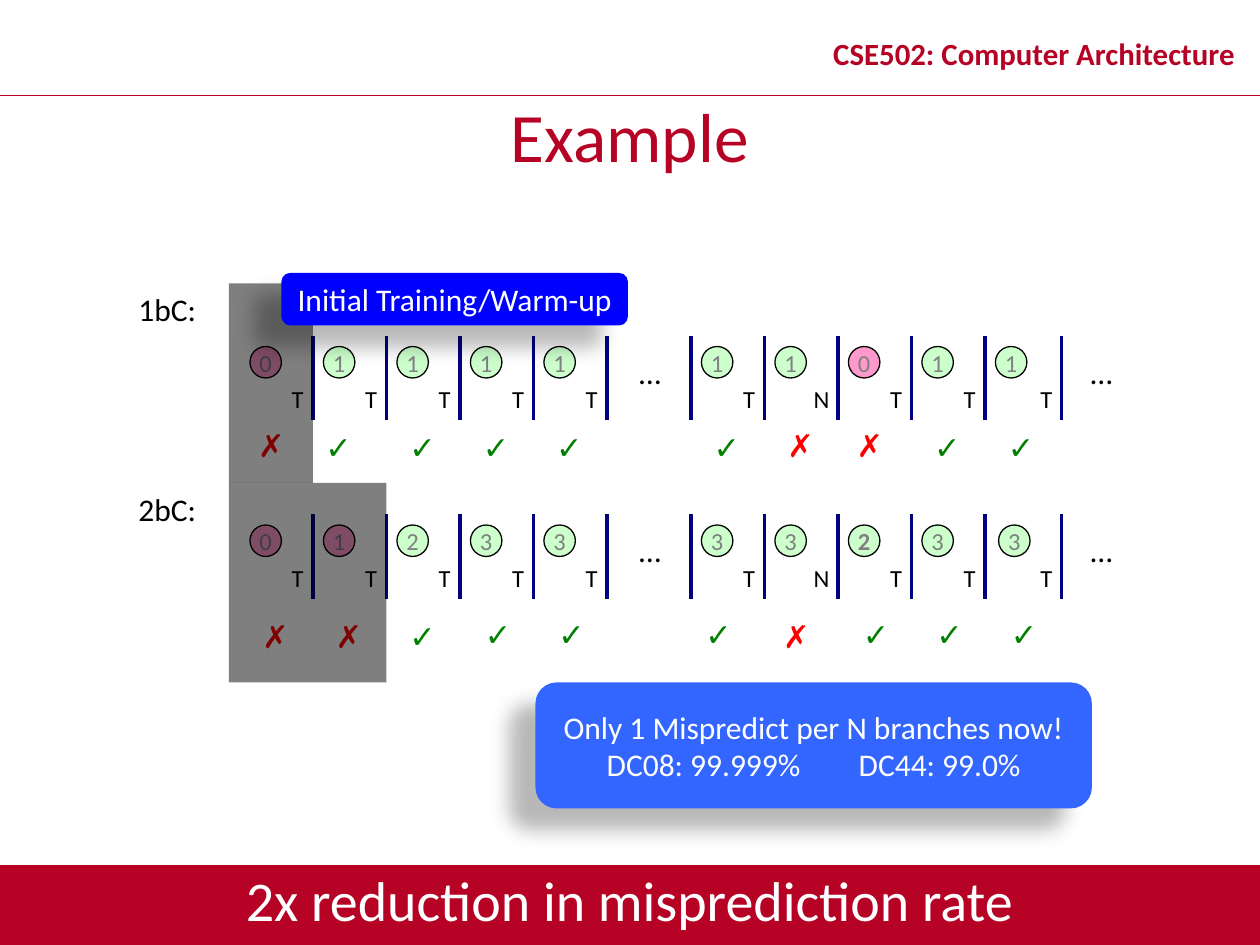
from dataclasses import dataclass, field

from lxml import etree
from pptx import Presentation
from pptx.dml.color import RGBColor
from pptx.enum.shapes import MSO_CONNECTOR, MSO_SHAPE
from pptx.enum.text import MSO_ANCHOR, MSO_AUTO_SIZE, PP_ALIGN
from pptx.oxml.ns import qn
from pptx.util import Inches, Pt

RECTANGLE, ROUNDED, OVAL = MSO_SHAPE.RECTANGLE, MSO_SHAPE.ROUNDED_RECTANGLE, MSO_SHAPE.OVAL
STRAIGHT = MSO_CONNECTOR.STRAIGHT
LEFT, CENTER = PP_ALIGN.LEFT, PP_ALIGN.CENTER
MIDDLE = MSO_ANCHOR.MIDDLE
GROW = MSO_AUTO_SIZE.SHAPE_TO_FIT_TEXT

COLUMNS, ROWS = 120, 90  # twelve grid units to the inch
CELL_PITCH = 7
CELL_LEFTS = [start + CELL_PITCH * i for start in (22.8, 65.8) for i in range(5)]
CELL_LEFTS[-1] += 0.3
SECOND_RUN = 5  # index of the first cell after the dots
OUTCOMES = "TTTTTTNTTT"


@dataclass(frozen=True)
class Theme:
    font: str = "Calibri"
    brand: str = "B60225"
    white: str = "FFFFFF"
    black: str = "000000"
    state_text: str = "808080"
    taken_fill: str = "CCFFCC"
    not_taken_fill: str = "FF99CC"
    separator: str = "000080"
    hit: str = "008000"
    miss: str = "FF0000"
    warm_up: str = "0000FF"
    result: str = "3366FF"
    header_size: float = 17.6
    title_size: float = 39.6
    footer_size: float = 32
    body_size: float = 18
    small_size: float = 14


THEME = Theme()


@dataclass
class Predictor:
    """One row of the trace; shifts move single symbols off the grid."""
    label: str
    label_top: float
    top: float
    states: str
    not_taken: set
    marks: str
    mark_drops: dict
    warm_up_top: float
    warm_up_width: float
    mark_shifts: dict = field(default_factory=dict)
    state_shifts: dict = field(default_factory=dict)
    bold_states: set = field(default_factory=set)


PREDICTORS = [
    Predictor("1bC:", 27, 32, "0111111011", {0, 7}, "✗✓✓✓✓✓✗✗✓✓",
              {"✗": 8, "✓": 8.2}, 27, 8,
              mark_shifts={0: (-0.4, 0), 1: (-1, 0), 7: (-0.4, 0), 9: (-0.3, 0)},
              state_shifts={9: -0.3}),
    Predictor("2bC:", 46.1, 49, "0123333233", {0, 1}, "✗✗✓✓✓✓✗✓✓✓",
              {"✗": 9.2, "✓": 9}, 46, 15,
              mark_shifts={2: (0, 0.2), 3: (0.2, 0), 4: (0.2, 0), 5: (-0.8, 0),
                           6: (-0.4, 0), 7: (0.2, 0), 8: (0.2, 0)},
              bold_states={7}),
]


def units(*values):
    return [Inches(value / 12) for value in values]


def color(value):
    return RGBColor.from_string(value)


def write(shape, text, size, text_color, align=CENTER, bold=False, wrap=False):
    frame = shape.text_frame
    frame.text = text
    frame.word_wrap = wrap
    for paragraph in frame.paragraphs:
        paragraph.alignment = align
        for run in paragraph.runs:
            run.font.name = THEME.font
            run.font.size = Pt(size)
            run.font.bold = bold
            run.font.color.rgb = color(text_color)
    return frame


def add_label(slide, box, text, size, text_color=THEME.black, **style):
    shape = slide.shapes.add_textbox(*units(*box))
    frame = write(shape, text, size, text_color, **style)
    frame.auto_size = GROW
    return frame


def add_filled(slide, kind, box, fill, alpha=None, outline=None):
    shape = slide.shapes.add_shape(kind, *units(*box))
    shape.shadow.inherit = False
    shape.fill.solid()
    shape.fill.fore_color.rgb = color(fill)
    if alpha is not None:
        fill_color = shape.fill._xPr.find(qn("a:solidFill"))[0]
        etree.SubElement(fill_color, qn("a:alpha"), val=str(alpha * 1000))
    if outline:
        shape.line.color.rgb = color(outline)
        shape.line.width = Pt(0.75)
    else:
        shape.line.fill.background()
    return shape


def add_shadow(shape, alpha, blur, distance, angle):
    effects = shape._element.spPr.find(qn("a:effectLst"))
    shadow = etree.SubElement(
        effects, qn("a:outerShdw"), blurRad=str(Pt(blur)), dist=str(Pt(distance)),
        dir=str(angle * 60000), algn="ctr", rotWithShape="0")
    shade = etree.SubElement(shadow, qn("a:srgbClr"), val=THEME.black)
    etree.SubElement(shade, qn("a:alpha"), val=str(alpha * 1000))


def add_line(slide, start, end, line_color, width):
    line = slide.shapes.add_connector(STRAIGHT, *units(*start, *end))
    line.line.color.rgb = color(line_color)
    line.line.width = Pt(width)
    etree.SubElement(line._element.spPr, qn("a:effectLst"))


def add_callout(slide, box, fill, text):
    shape = add_filled(slide, ROUNDED, box, fill)
    shape.adjustments[0] = 0.167
    add_shadow(shape, 28, 11.8, 19.7, 141)
    write(shape, text, THEME.body_size, THEME.white).vertical_anchor = MIDDLE


def add_separator(slide, left, top):
    add_line(slide, (left, top), (left, top + 8), THEME.separator, 2)


def add_cell(slide, predictor, index):
    """State circle, branch outcome, separator and prediction mark of one step."""
    left, top = CELL_LEFTS[index], predictor.top
    fill = THEME.not_taken_fill if index in predictor.not_taken else THEME.taken_fill
    state_left = left + 1 + predictor.state_shifts.get(index, 0)
    state = add_filled(slide, OVAL, (state_left, top + 1, 3, 3), fill, outline=THEME.black)
    write(state, predictor.states[index], THEME.small_size, THEME.state_text,
          bold=index in predictor.bold_states).vertical_anchor = MIDDLE

    outcome = OUTCOMES[index]
    offset, width = (3.8, 3.8) if outcome == "T" else (3.5, 4.2)
    add_label(slide, (left + offset, top + 4, width, 4.1), outcome, THEME.small_size, align=LEFT)
    add_separator(slide, left + CELL_PITCH, top)

    mark = predictor.marks[index]
    shift_x, shift_y = predictor.mark_shifts.get(index, (0, 0))
    mark_color, width = (THEME.hit, 4.8) if mark == "✓" else (THEME.miss, 4.3)
    mark_top = top + predictor.mark_drops[mark] + shift_y
    add_label(slide, (left + 1 + shift_x, mark_top, width, 4.8), mark, THEME.body_size,
              mark_color, align=LEFT, bold=True)


def add_predictor(slide, predictor):
    add_label(slide, (12, predictor.label_top, 8.3, 4.8), predictor.label,
              THEME.body_size, align=LEFT)
    for index in range(len(OUTCOMES)):
        add_cell(slide, predictor, index)
    add_separator(slide, CELL_LEFTS[SECOND_RUN], predictor.top)
    for left in (58.8, 101.8):
        add_label(slide, (left, predictor.top + 1, 6.2, 4.8), "…", THEME.body_size, wrap=True)
    add_filled(slide, RECTANGLE,
               (21.8, predictor.warm_up_top, predictor.warm_up_width, 19), THEME.black, alpha=50)


def add_frame(slide):
    """Footer band, header rule, course name and title."""
    band = add_filled(slide, RECTANGLE, (0, 82.4, COLUMNS, ROWS - 82.4), THEME.brand)
    add_shadow(band, 35, 3.1, 1.8, 90)
    add_line(slide, (0, 9.1), (COLUMNS, 9.1), THEME.brand, 1)
    course = slide.shapes.add_textbox(*units(77, 1.6, 43, 7.5))
    frame = write(course, "CSE502: Computer Architecture", THEME.header_size,
                  THEME.brand, bold=True, wrap=True)
    frame.vertical_anchor = MIDDLE
    frame.paragraphs[0].line_spacing = 0.8
    title = slide.shapes.title
    title.left, title.top, title.width, title.height = units(0, 9.1, COLUMNS, 7.5)
    write(title, "Example", THEME.title_size, THEME.brand, wrap=True).vertical_anchor = MIDDLE


def main():
    presentation = Presentation()
    presentation.slide_width, presentation.slide_height = units(COLUMNS, ROWS)
    slide = presentation.slides.add_slide(presentation.slide_layouts[5])
    add_frame(slide)
    for predictor in PREDICTORS:
        add_predictor(slide, predictor)
    add_callout(slide, (26.8, 26, 33, 5), THEME.warm_up, "Initial Training/Warm-up")
    add_callout(slide, (51, 65, 53, 12), THEME.result,
                "Only 1 Mispredict per N branches now!\nDC08: 99.999%\tDC44: 99.0%")
    add_label(slide, (0, 81.8, COLUMNS, 7.6), "2x reduction in misprediction rate",
              THEME.footer_size, THEME.white, wrap=True)
    presentation.save("out.pptx")


if __name__ == "__main__":
    main()
